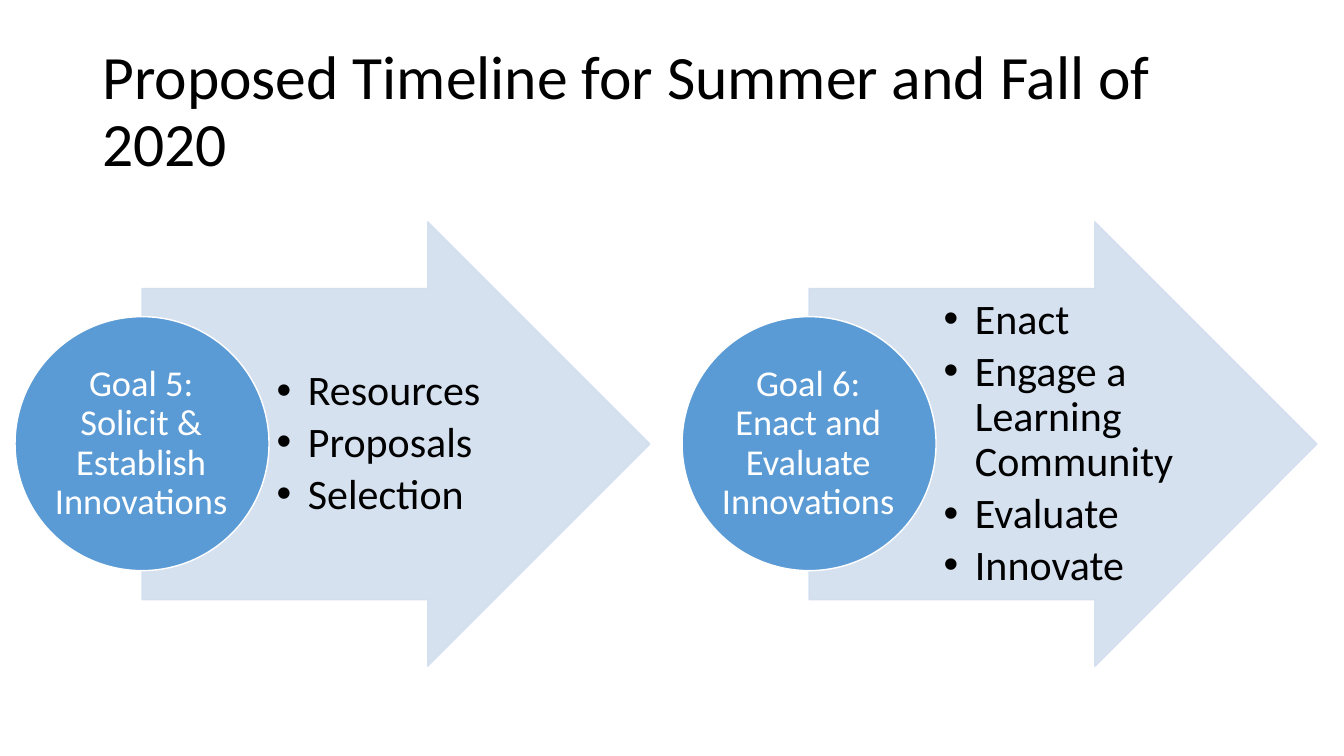
from dataclasses import dataclass

from lxml import etree
from pptx import Presentation
from pptx.dml.color import RGBColor
from pptx.enum.shapes import MSO_SHAPE
from pptx.enum.text import MSO_ANCHOR, PP_ALIGN
from pptx.oxml.ns import qn
from pptx.util import Cm, Pt

RIGHT_ARROW = MSO_SHAPE.RIGHT_ARROW
OVAL = MSO_SHAPE.OVAL
MIDDLE = MSO_ANCHOR.MIDDLE
LEFT = PP_ALIGN.LEFT
CENTER = PP_ALIGN.CENTER

BLACK = RGBColor(0x00, 0x00, 0x00)
WHITE = RGBColor(0xFF, 0xFF, 0xFF)
BLUE = RGBColor(0x5B, 0x9B, 0xD5)
PALE_BLUE = RGBColor(0xD2, 0xDE, 0xEF)

FONT_NAME = "Calibri"
ARROW_OPACITY = 90
GOAL_PITCH = 16.81
BULLET_INDENT = Cm(0.79)


@dataclass(frozen=True)
class Box:
    left: float
    top: float
    width: float
    height: float

    def moved(self, offset: float) -> "Box":
        return Box(self.left + offset, self.top, self.width, self.height)

    def lengths(self) -> tuple:
        return Cm(self.left), Cm(self.top), Cm(self.width), Cm(self.height)


@dataclass(frozen=True)
class TextStyle:
    size: float
    color: RGBColor
    margins: tuple
    alignment: PP_ALIGN = LEFT
    space_after: float = 0
    bulleted: bool = False


@dataclass(frozen=True)
class Goal:
    label: str
    steps: tuple


TITLE_BOX = Box(2.33, 1.01, 29.21, 3.68)
ARROW_BOX = Box(3.58, 5.59, 12.8, 11.2)
STEPS_BOX = Box(6.78, 7.26, 6.25, 7.85)
CIRCLE_BOX = Box(0.38, 7.98, 6.4, 6.4)
LABEL_BOX = Box(1.3, 8.92, 4.52, 4.52)

TITLE_STYLE = TextStyle(44, BLACK, (0.25, 0.13, 0.25, 0.13))
STEPS_STYLE = TextStyle(30, BLACK, (0.19, 0.05, 0.1, 0.05),
                        space_after=4.5, bulleted=True)
LABEL_STYLE = TextStyle(26, WHITE, (0.04, 0.04, 0.04, 0.04), alignment=CENTER)

GOALS = (
    Goal("Goal 5: Solicit & Establish Innovations",
         ("Resources", "Proposals", "Selection")),
    Goal("Goal 6: Enact and Evaluate Innovations",
         ("Enact", "Engage a Learning Community", "Evaluate", "Innovate")),
)


def apply_format(target, values: dict) -> None:
    for name, value in values.items():
        setattr(target, name, value)


def add_bullet(paragraph) -> None:
    paragraph.level = 1
    properties = paragraph._p.get_or_add_pPr()
    properties.set("marL", str(BULLET_INDENT))
    properties.set("indent", str(-BULLET_INDENT))
    etree.SubElement(properties, qn("a:buFont"), typeface="Arial")
    etree.SubElement(properties, qn("a:buChar"), char="•")


def add_text(slide, box: Box, lines: tuple, style: TextStyle) -> None:
    text_frame = slide.shapes.add_textbox(*box.lengths()).text_frame
    left, top, right, bottom = map(Cm, style.margins)
    apply_format(text_frame, {
        "word_wrap": True,
        "vertical_anchor": MIDDLE,
        "margin_left": left,
        "margin_top": top,
        "margin_right": right,
        "margin_bottom": bottom,
        "text": "\n".join(lines),
    })
    for paragraph in text_frame.paragraphs:
        apply_format(paragraph, {
            "alignment": style.alignment,
            "line_spacing": 0.9,
            "space_after": Pt(style.space_after),
        })
        if style.bulleted:
            add_bullet(paragraph)
        font = paragraph.runs[0].font
        apply_format(font, {"name": FONT_NAME, "size": Pt(style.size)})
        font.color.rgb = style.color


def add_figure(slide, kind: MSO_SHAPE, box: Box, fill: RGBColor, line: RGBColor):
    shape = slide.shapes.add_shape(kind, *box.lengths())
    shape.shadow.inherit = False
    shape.fill.solid()
    shape.fill.fore_color.rgb = fill
    shape.line.color.rgb = line
    shape.line.width = Pt(1)
    return shape


def add_arrow(slide, box: Box) -> None:
    shape = add_figure(slide, RIGHT_ARROW, box, PALE_BLUE, PALE_BLUE)
    shape.adjustments[0] = 0.7
    shape.adjustments[1] = 0.5
    for color in shape._element.spPr.iter(qn("a:srgbClr")):
        etree.SubElement(color, qn("a:alpha"), val=str(ARROW_OPACITY * 1000))


def add_goal(slide, goal: Goal, offset: float) -> None:
    add_arrow(slide, ARROW_BOX.moved(offset))
    add_text(slide, STEPS_BOX.moved(offset), goal.steps, STEPS_STYLE)
    add_figure(slide, OVAL, CIRCLE_BOX.moved(offset), BLUE, WHITE)
    add_text(slide, LABEL_BOX.moved(offset), (goal.label,), LABEL_STYLE)


def main() -> None:
    presentation = Presentation()
    apply_format(presentation, {"slide_width": Cm(33.87), "slide_height": Cm(19.05)})
    slide = presentation.slides.add_slide(presentation.slide_layouts[6])
    add_text(slide, TITLE_BOX,
             ("Proposed Timeline for Summer and Fall of 2020",), TITLE_STYLE)
    for index, goal in enumerate(GOALS):
        add_goal(slide, goal, index * GOAL_PITCH)
    presentation.save("out.pptx")


if __name__ == "__main__":
    main()
